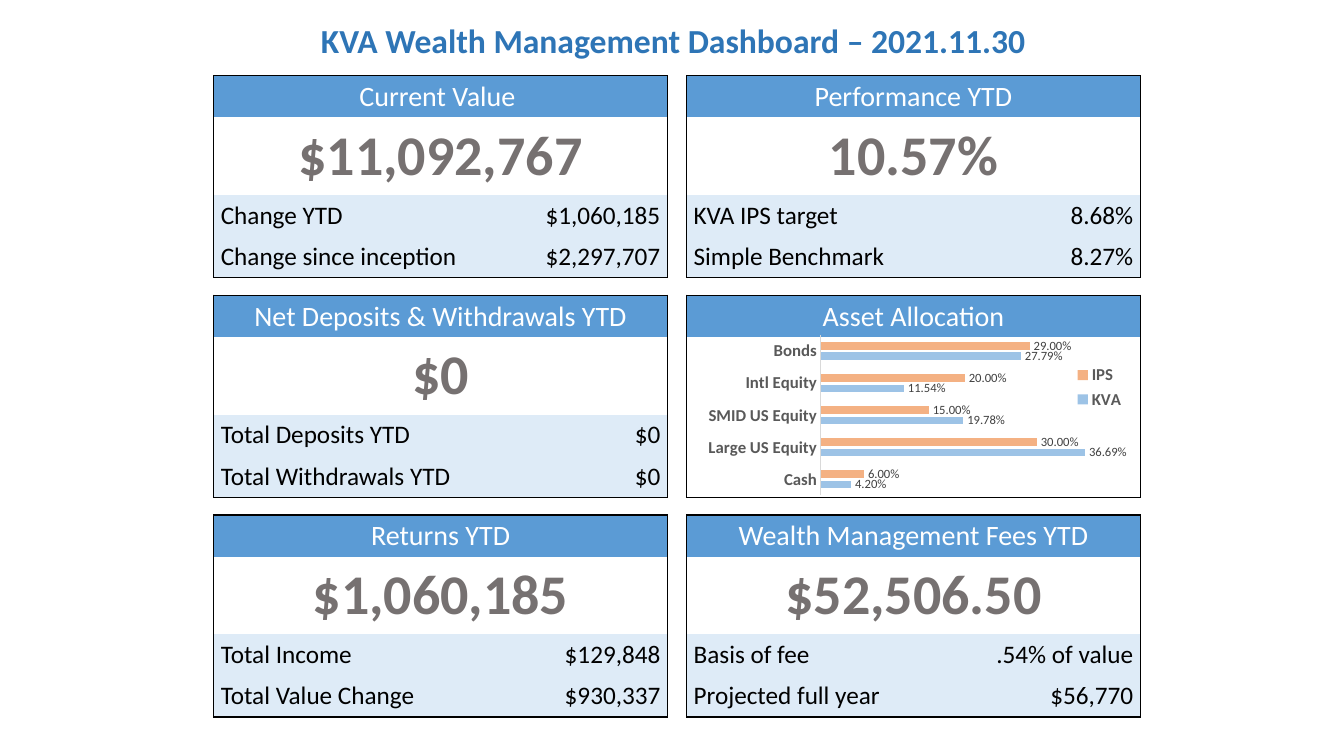
import pptx
import pptx.chart.data
import pptx.dml.color
import pptx.enum.chart
import pptx.enum.text
import pptx.oxml
import pptx.oxml.ns
import pptx.util

PX = 9144  # 100 px to the inch
FONT = "Calibri"
COLORS = {
    "title": "2E75B6", "header": "5B9BD5", "band": "DEEBF7", "white": "FFFFFF",
    "black": "000000", "figure": "767171", "label": "595959", "value": "404040",
    "axis": "D9D9D9", "portfolio": "9DC3E6", "target": "F4B183",
}
NO_TABLE_STYLE = "{2D5ABB26-0587-4C30-8999-92F81FD0307C}"
ALIGN = pptx.enum.text.PP_ALIGN
MIDDLE = pptx.enum.text.MSO_ANCHOR.MIDDLE

COLUMN_X = (212, 681)
FIRST_Y, PITCH = 75, 218
COLUMN_WIDTHS = (297, 153)
ROW_HEIGHTS = (41, 77, 41, 41)
CARD_WIDTH = sum(COLUMN_WIDTHS)

# Each card: header, main figure, then label and value pairs.
CARDS = [
    [("Current Value ", "$11,092,767",
      [("Change YTD", "$1,060,185"), ("Change since inception", "$2,297,707")]),
     ("Performance YTD", "10.57%",
      [("KVA IPS target", "8.68%"), ("Simple Benchmark", "8.27%")])],
    [("Net Deposits & Withdrawals YTD", "$0",
      [("Total Deposits YTD", "$0"), ("Total Withdrawals YTD", "$0")]),
     ("Asset Allocation", None, [])],
    [("Returns YTD", "$1,060,185",
      [("Total Income", "$129,848"), ("Total Value Change", "$930,337")]),
     ("Wealth Management Fees YTD", "$52,506.50",
      [("Basis of fee", ".54% of value "), ("Projected full year", "$56,770")])],
]
CLASSES = ("Cash", "Large US Equity", "SMID US Equity", "Intl Equity", "Bonds")
ALLOCATION = [
    ("KVA", (0.042, 0.3669, 0.1978, 0.1154, 0.2779), "portfolio"),
    ("IPS", (0.06, 0.3, 0.15, 0.2, 0.29), "target"),
]


def rgb(name):
    return pptx.dml.color.RGBColor.from_string(COLORS[name])


def style_font(font, size, color, bold=False):
    font.name, font.size, font.bold = FONT, pptx.util.Pt(size), bold
    font.color.rgb = rgb(color)


def write(frame, text, size=18, color="black", bold=False, align=ALIGN.LEFT, spacing=None):
    para = frame.paragraphs[0]
    para.alignment = align
    if spacing:
        para.line_spacing = spacing
    span = para.add_run()
    span.text = text
    style_font(span.font, size, color, bold)


def set_borders(cell, sides):
    """Draw 1 pt black lines on the sides, given in the order L, R, T, B."""
    for side in sides:
        cell._tc.get_or_add_tcPr().append(pptx.oxml.parse_xml(
            f'<a:ln{side} {pptx.oxml.ns.nsdecls("a")} w="12700"><a:solidFill>'
            f'<a:srgbClr val="{COLORS["black"]}"/></a:solidFill></a:ln{side}>'))


def manual_layout(x, y, width, height, inner=False):
    target = '<c:layoutTarget val="inner"/>' if inner else ""
    return pptx.oxml.parse_xml(
        f'<c:layout {pptx.oxml.ns.nsdecls("c")}><c:manualLayout>{target}'
        '<c:xMode val="edge"/><c:yMode val="edge"/>'
        f'<c:x val="{x}"/><c:y val="{y}"/><c:w val="{width}"/><c:h val="{height}"/>'
        '</c:manualLayout></c:layout>')


class Dashboard:
    def __init__(self, deck):
        self.page = deck.slides.add_slide(deck.slide_layouts[6])

    def title(self, text, x, y, width, height):
        box = self.page.shapes.add_textbox(x * PX, y * PX, width * PX, height * PX)
        box.text_frame.word_wrap = True
        box.text_frame.vertical_anchor = MIDDLE
        write(box.text_frame, text, size=24, color="title", bold=True,
              align=ALIGN.CENTER, spacing=0.9)

    def card(self, x, y, header, figure, details):
        holder = self.page.shapes.add_table(
            len(ROW_HEIGHTS), len(COLUMN_WIDTHS), x * PX, y * PX,
            CARD_WIDTH * PX, sum(ROW_HEIGHTS) * PX)
        table = holder.table
        table.first_row = table.horz_banding = False
        table._tbl.tblPr.find(pptx.oxml.ns.qn("a:tableStyleId")).text = NO_TABLE_STYLE
        for column, width in zip(table.columns, COLUMN_WIDTHS):
            column.width = width * PX
        for row, height in zip(table.rows, ROW_HEIGHTS):
            row.height = height * PX
        for index in (0, 1):
            table.cell(index, 0).merge(table.cell(index, 1))

        fills = ["header", "white"] + ["band" if details else "white"] * 2
        for index, fill in enumerate(fills):
            for column in (0, 1):
                cell = table.cell(index, column)
                sides = "L" if column == 0 else ""
                sides += "R" if column == 1 or index < 2 else ""
                sides += {0: "T", 3: "B"}.get(index, "")
                set_borders(cell, sides)
                cell.fill.solid()
                cell.fill.fore_color.rgb = rgb(fill)
                cell.vertical_anchor = MIDDLE
                cell.margin_left = cell.margin_right = 7 * PX
                cell.margin_top = cell.margin_bottom = 4 * PX

        write(table.cell(0, 0).text_frame, header, size=20, color="white", align=ALIGN.CENTER)
        if figure:
            write(table.cell(1, 0).text_frame, figure, size=40, color="figure",
                  bold=True, align=ALIGN.CENTER)
        for index, (label, value) in enumerate(details, 2):
            write(table.cell(index, 0).text_frame, label)
            write(table.cell(index, 1).text_frame, value, align=ALIGN.RIGHT)

    def allocation_chart(self, x, y, width, height):
        kinds = pptx.enum.chart
        data = pptx.chart.data.CategoryChartData(number_format="0.00%")
        data.categories = CLASSES
        for name, values, _ in ALLOCATION:
            data.add_series(name, values)
        chart = self.page.shapes.add_chart(
            kinds.XL_CHART_TYPE.BAR_CLUSTERED, x * PX, y * PX,
            width * PX, height * PX, data).chart
        chart.has_title = False
        style_font(chart.font, 10, "black")

        names = chart.category_axis
        names.major_tick_mark = names.minor_tick_mark = kinds.XL_TICK_MARK.NONE
        names.format.line.color.rgb = rgb("axis")
        names.format.line.width = pptx.util.Pt(0.75)
        style_font(names.tick_labels.font, 12, "label", bold=True)
        scale = chart.value_axis
        scale.minimum_scale, scale.maximum_scale = 0, 0.4
        scale.has_major_gridlines = False
        scale.visible = False

        plot = chart.plots[0]
        plot.gap_width, plot.overlap = 182, -33
        plot.vary_by_categories = False
        for series, (_, _, color) in zip(plot.series, ALLOCATION):
            series.format.fill.solid()
            series.format.fill.fore_color.rgb = rgb(color)
            labels = series.data_labels
            labels.show_value = True
            labels.number_format, labels.number_format_is_linked = "0.00%", False
            labels.position = kinds.XL_LABEL_POSITION.OUTSIDE_END
            style_font(labels.font, 9, "value")

        chart.has_legend = True
        chart.legend.position = kinds.XL_LEGEND_POSITION.RIGHT
        chart.legend.include_in_layout = False
        style_font(chart.legend.font, 12, "label", bold=True)
        layout_tag = pptx.oxml.ns.qn("c:layout")
        area = chart._chartSpace.chart.plotArea
        legend = chart.legend._element
        for parent in (area, legend):
            for old in parent.findall(layout_tag):
                parent.remove(old)
        area.insert(0, manual_layout(0.296, 0, 0.635, 1, inner=True))
        legend.find(pptx.oxml.ns.qn("c:legendPos")).addnext(
            manual_layout(0.84, 0.16, 0.14, 0.33))


def main():
    deck = pptx.Presentation()
    deck.slide_width, deck.slide_height = 1333 * PX, 750 * PX
    dashboard = Dashboard(deck)
    dashboard.title("KVA Wealth Management Dashboard – 2021.11.30 ", 212, 19, 919, 46)
    for row, cards in enumerate(CARDS):
        for x, card in zip(COLUMN_X, cards):
            dashboard.card(x, FIRST_Y + row * PITCH, *card)
    dashboard.allocation_chart(COLUMN_X[1], 332, CARD_WIDTH, 160)
    deck.save("out.pptx")


if __name__ == "__main__":
    main()
